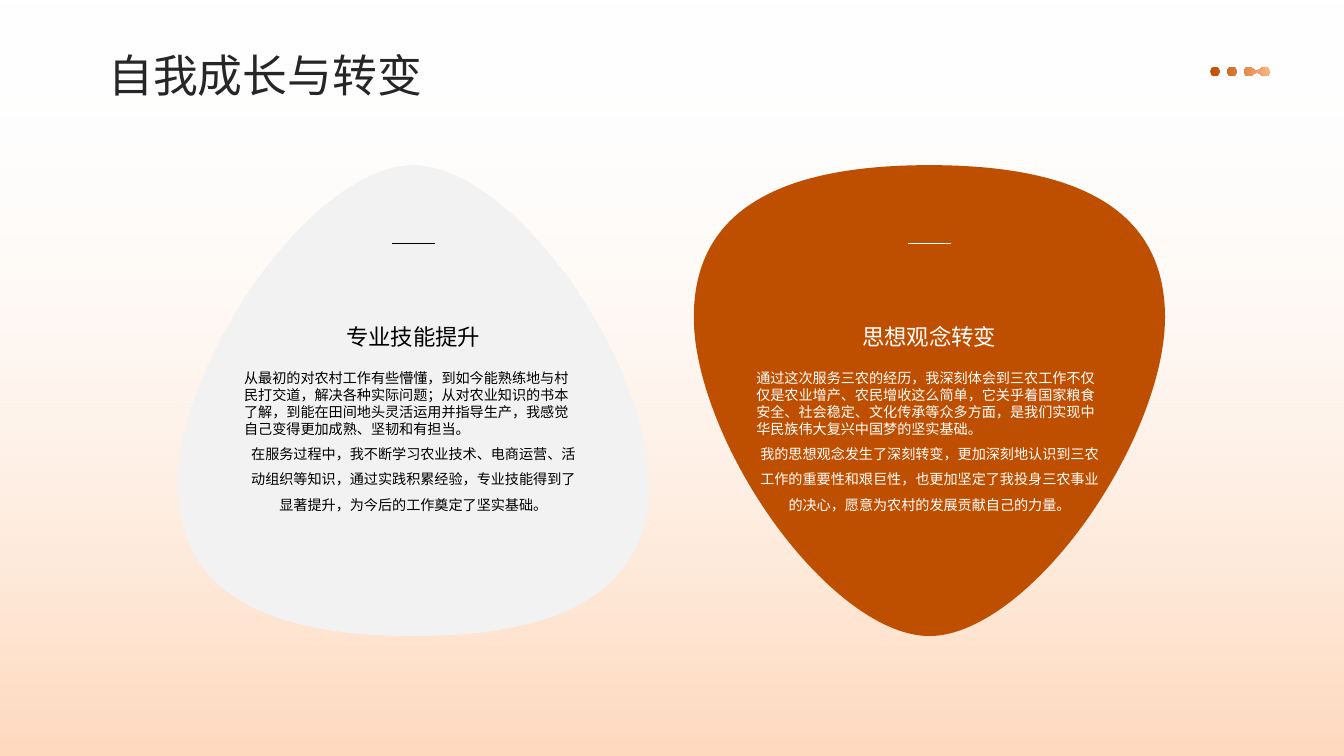
from lxml.etree import SubElement
from pptx import Presentation
from pptx.dml.color import RGBColor
from pptx.enum.shapes import MSO_CONNECTOR as Connector, MSO_SHAPE as Shape
from pptx.enum.text import MSO_ANCHOR as Anchor, PP_ALIGN as Align
from pptx.oxml.ns import qn
from pptx.util import Inches, Pt

WHITE = RGBColor(0xFF, 0xFF, 0xFF)
BLACK = RGBColor(0x00, 0x00, 0x00)
CHARCOAL = RGBColor(0x26, 0x26, 0x26)
PALE_GREY = RGBColor(0xF2, 0xF2, 0xF2)
RUST = RGBColor(0xBF, 0x4F, 0x00)
APRICOT = RGBColor(0xFF, 0xB4, 0x7F)
PEACH = RGBColor(0xFF, 0xDA, 0xBF)

# Bezier outlines: a start point, then three points for each curve.
# The left half of a card is in hundredths of the card, from bottom to top.
CARD_HALF = [(50, 100), (16.45, 100), (0, 89.29), (0, 67.67),
             (0, 55.46), (6.62, 38.54), (17.09, 23.98),
             (28, 8.99), (40.4, 0), (50, 0)]
# Dot parts are in dot radii, from the left end over the top.
DOT_QUARTER = [(-1, 0), (-1, -0.55), (-0.55, -1), (0, -1)]
NECK = [(0.3, -1), (0.6, -0.87), (0.8, -0.55), (1.05, -0.4), (1.35, -0.2), (1.63, -0.2)]

CARD_LEFT, CARD_TOP, CARD_WIDTH, CARD_HEIGHT = 13.22, 21.85, 35.06, 62.29
CARD_STEP = 38.4

CARDS = [
    dict(fill=PALE_GREY, ink=BLACK, flipped=False, body_inset=4.95, body_width=25.2,
         heading="专业技能提升",
         body=["从最初的对农村工作有些懵懂，到如今能熟练地与村民打交道，解决各种实际问题；"
               "从对农业知识的书本了解，到能在田间地头灵活运用并指导生产，"
               "我感觉自己变得更加成熟、坚韧和有担当。",
               "在服务过程中，我不断学习农业技术、电商运营、活动组织等知识，"
               "通过实践积累经验，专业技能得到了显著提升，为今后的工作奠定了坚实基础。"]),
    dict(fill=RUST, ink=WHITE, flipped=True, body_inset=4.65, body_width=25.8,
         heading="思想观念转变",
         body=["通过这次服务三农的经历，我深刻体会到三农工作不仅仅是农业增产、农民增收这么简单，"
               "它关乎着国家粮食安全、社会稳定、文化传承等众多方面，"
               "是我们实现中华民族伟大复兴中国梦的坚实基础。",
               "我的思想观念发生了深刻转变，更加深刻地认识到三农工作的重要性和艰巨性，"
               "也更加坚定了我投身三农事业的决心，愿意为农村的发展贡献自己的力量。"]),
]


def mirror_across(points, column):
    """Continue an outline with its reflection in a vertical axis."""
    return points + [(2 * column - x, y) for x, y in points[-2::-1]]


def mirror_down(points):
    """Continue an outline with its reflection in the row 0."""
    return points + [(x, -y) for x, y in points[-2::-1]]


def fit(points, left, top, width, height):
    return [(left + width * x, top + height * y) for x, y in points]


class SlideBuilder:
    """Holds the style and the slide; lengths are hundredths of its width and height."""

    font_name = "Noto Sans CJK SC"

    def __init__(self, presentation):
        self.column = presentation.slide_width / 100
        self.row = presentation.slide_height / 100
        self.slide = presentation.slides.add_slide(presentation.slide_layouts[6])
        self.shapes = self.slide.shapes

    def place(self, *lengths):
        """Turn alternating columns and rows into slide lengths."""
        return [round(length * (self.row if index % 2 else self.column))
                for index, length in enumerate(lengths)]

    def paint(self, shape, *colors, angle=0):
        """Fill with one colour, or with a gradient between two."""
        shape.shadow.inherit = False
        shape.line.fill.background()
        if len(colors) == 1:
            shape.fill.solid()
            shape.fill.fore_color.rgb = colors[0]
            return
        shape.fill.gradient()
        shape.fill.gradient_angle = angle
        for stop, color in zip(shape.fill.gradient_stops, colors):
            stop.color.rgb = color

    def backdrop(self):
        shape = self.shapes.add_shape(Shape.RECTANGLE, *self.place(0, 0, 100, 100))
        self.paint(shape, WHITE, PEACH, angle=270)
        first_color = shape._element.find(".//" + qn("a:gs"))[0]
        SubElement(first_color, qn("a:alpha"), val="0")

    def outline(self, contours, *colors):
        """Draw closed Bezier contours, each curve from three points."""
        first, *others = [[self.place(*point) for point in contour] for contour in contours]
        builder = self.shapes.build_freeform(*first[0])
        builder.add_line_segments(first[1:], close=True)
        for contour in others:
            builder.move_to(*contour[0])
            builder.add_line_segments(contour[1:], close=True)
        shape = builder.convert_to_shape()
        segments = list(shape._element.iter(qn("a:lnTo")))
        for start in range(0, len(segments), 3):
            curve = segments[start].makeelement(qn("a:cubicBezTo"))
            segments[start].addprevious(curve)
            for segment in segments[start:start + 3]:
                curve.append(segment[0])
                segment.getparent().remove(segment)
        self.paint(shape, *colors)

    def rule(self, left, right, row, color):
        line = self.shapes.add_connector(Connector.STRAIGHT, *self.place(left, row, right, row))
        line.line.color.rgb = color
        line.line.width = Pt(1)
        SubElement(line._element.spPr, qn("a:effectLst"))

    def text(self, box, paragraphs, size, color, anchor=Anchor.TOP):
        """Write paragraphs given as (text, dict of paragraph formats)."""
        frame = self.shapes.add_textbox(*self.place(*box)).text_frame
        frame_format = dict(word_wrap=True, vertical_anchor=anchor, margin_left=0,
                            margin_top=0, margin_right=0, margin_bottom=0)
        for name, value in frame_format.items():
            setattr(frame, name, value)
        for index, (words, paragraph_format) in enumerate(paragraphs):
            paragraph = frame.add_paragraph() if index else frame.paragraphs[0]
            for name, value in paragraph_format.items():
                setattr(paragraph, name, value)
            run = paragraph.add_run()
            run.text = words
            for name, value in dict(size=Pt(size), name=self.font_name).items():
                setattr(run.font, name, value)
            run.font.color.rgb = color
            SubElement(run.font._element, qn("a:ea"), typeface=self.font_name)

    def card(self, left, fill, ink, flipped, body_inset, body_width, heading, body):
        points = mirror_across(CARD_HALF, 50)
        if flipped:
            points = [(x, 100 - y) for x, y in points]
        self.outline([fit(points, left, CARD_TOP, CARD_WIDTH / 100, CARD_HEIGHT / 100)], fill)
        self.rule(left + 15.95, left + 19.11, 32.23, ink)
        self.text((left + 4.63, 34.4, 25.8, 11.87),
                  [(heading, dict(alignment=Align.CENTER, line_spacing=1.3))],
                  16, ink, Anchor.BOTTOM)
        formats = [{}, dict(alignment=Align.CENTER, line_spacing=1.5)]
        self.text((left + body_inset, 48.83, body_width, 20.53),
                  list(zip(body, formats)), 10.1, ink)

    def dots(self):
        """Two single dots, then two joined by a narrow waist."""
        single = mirror_down(mirror_across(DOT_QUARTER, 0))
        joined = mirror_down(mirror_across(DOT_QUARTER + NECK, NECK[-1][0]))
        contours = [fit(points, column, 9.47, 0.36, 0.64)
                    for points, column in [(joined, 92.93), (single, 91.66), (single, 90.39)]]
        self.outline(contours, RUST, APRICOT)


def main():
    presentation = Presentation()
    presentation.slide_width = Inches(13.33)
    presentation.slide_height = Inches(7.5)
    builder = SlideBuilder(presentation)
    builder.backdrop()
    for index, card in enumerate(CARDS):
        builder.card(CARD_LEFT + index * CARD_STEP, **card)
    builder.text((8.06, 6.13, 80.72, 6.8), [("自我成长与转变", dict(line_spacing=1.1))],
                 32, CHARCOAL, Anchor.MIDDLE)
    builder.dots()
    presentation.save("out.pptx")


if __name__ == "__main__":
    main()
